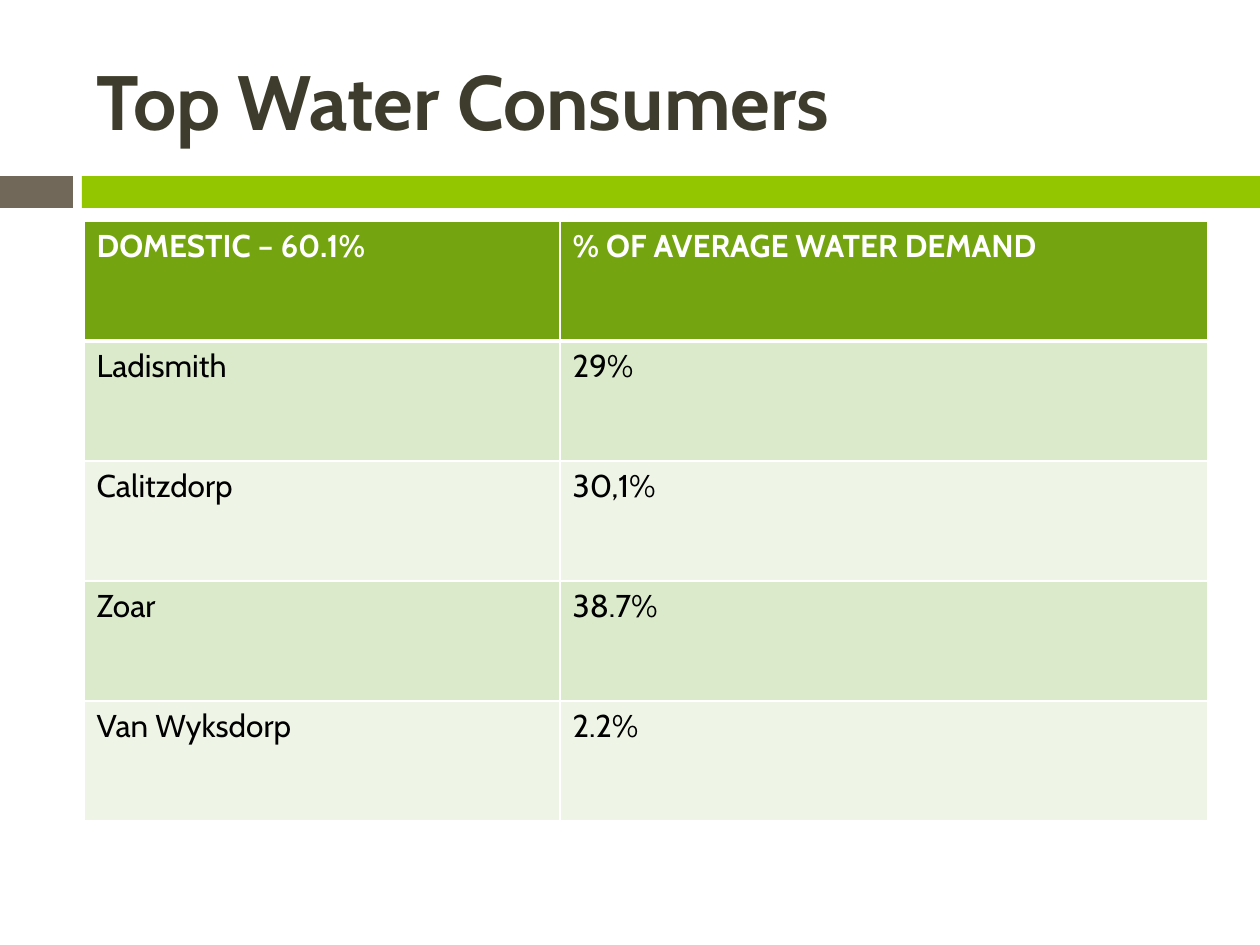
from lxml.etree import SubElement as Sub
from pptx import Presentation
from pptx.dml.color import RGBColor as Rgb
from pptx.enum.shapes import MSO_SHAPE as Shape
from pptx.enum.text import MSO_ANCHOR as Anchor
from pptx.oxml.ns import qn
from pptx.util import Pt

TITLE = "Top Water Consumers"
ROWS = [
    ("DOMESTIC – 60.1%", "% OF AVERAGE WATER DEMAND"),
    ("Ladismith", "29%"),
    ("Calitzdorp", "30,1%"),
    ("Zoar", "38.7%"),
    ("Van Wyksdorp", "2.2%"),
]
HEX = {
    "stone": "71685A", "lime": "94C600", "title": "3E3D2D", "head": "74A510",
    "odd": "DCEACC", "even": "EEF5E7", "white": "FFFFFF", "black": "000000",
}
BARS = [(0, 73, "stone"), (82, 1178, "lime")]
COLS = [476, 648]
LEFT, TOP, ROW = 84, 221, 120
FONT = "Cabin"


def px(n):
    return round(n * 914400 / 126)


def tint(name):
    return Rgb.from_string(HEX[name])


def style(frame, size, color, bold):
    font = frame.paragraphs[0].runs[0].font
    font.name, font.size, font.bold = FONT, Pt(size), bold
    font.color.rgb = tint(color)


def edge(cell, side, width):
    line = Sub(cell._tc.get_or_add_tcPr(), qn("a:ln" + side), w=str(Pt(width)))
    Sub(Sub(line, qn("a:solidFill")), qn("a:srgbClr"), val=HEX["white"])


def add_bar(slide, left, width, color):
    bar = slide.shapes.add_shape(Shape.RECTANGLE, px(left), px(176), px(width), px(32))
    bar.shadow.inherit = False
    bar.fill.solid()
    bar.fill.fore_color.rgb = tint(color)
    bar.line.fill.background()


def add_title(slide):
    box = slide.shapes.add_textbox(px(LEFT), px(32), px(sum(COLS)), px(136))
    frame = box.text_frame
    frame.word_wrap = True
    frame.vertical_anchor = Anchor.MIDDLE
    frame.text = TITLE
    style(frame, 44, "title", True)


def add_grid(slide):
    table = slide.shapes.add_table(
        len(ROWS), len(COLS), px(LEFT), px(TOP), px(sum(COLS)), px(ROW * len(ROWS))
    ).table
    for col, width in zip(table.columns, COLS):
        col.width = px(width)
    for r, row in enumerate(ROWS):
        head = r == 0
        for c, text in enumerate(row):
            cell = table.cell(r, c)
            cell.text = text
            style(cell.text_frame, 18, "white" if head else "black", head)
            for side in "LRTB":
                thick = (head and side == "B") or (r == 1 and side == "T")
                edge(cell, side, 3 if thick else 1)
            cell.fill.solid()
            cell.fill.fore_color.rgb = tint("head" if head else "odd" if r % 2 else "even")


def main():
    deck = Presentation()
    deck.slide_width, deck.slide_height = px(1260), px(945)
    slide = deck.slides.add_slide(deck.slide_layouts[6])
    for bar in BARS:
        add_bar(slide, *bar)
    add_title(slide)
    add_grid(slide)
    deck.save("out.pptx")


if __name__ == "__main__":
    main()
